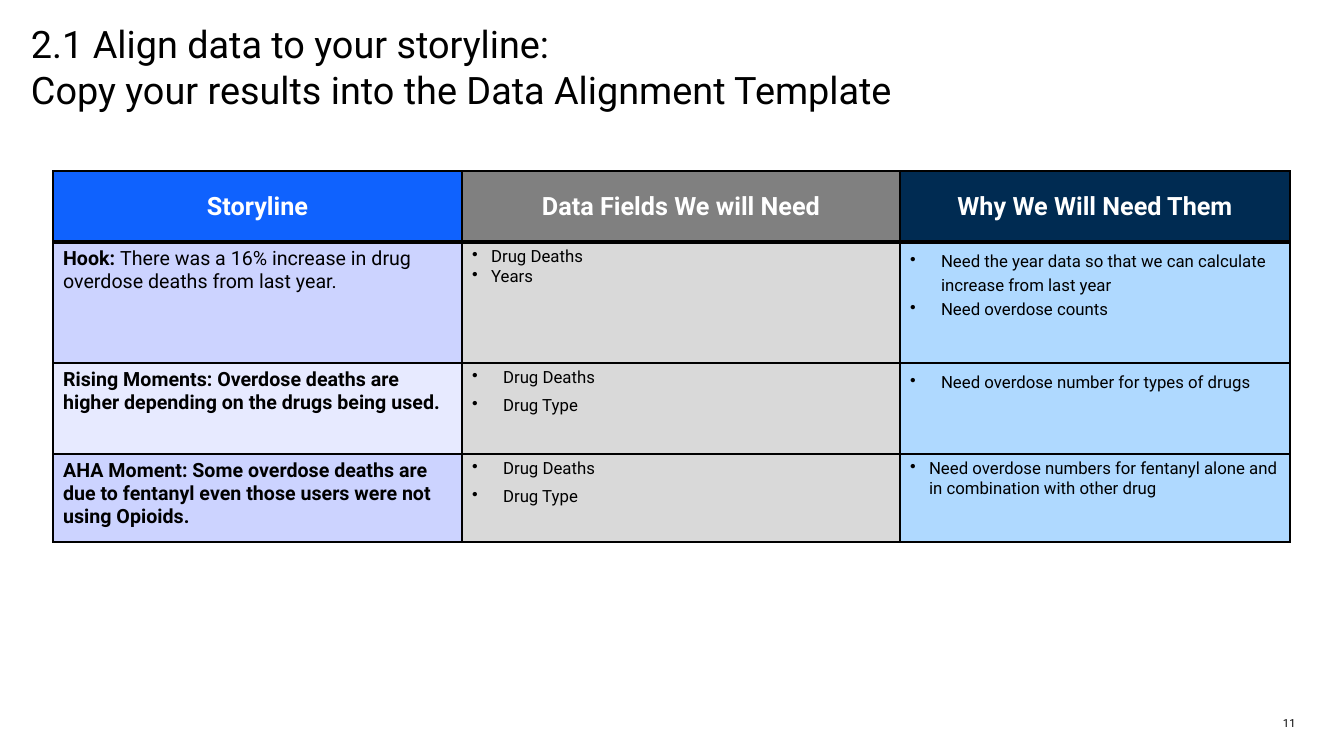
from dataclasses import dataclass

from lxml.etree import SubElement
from pptx import Presentation
from pptx.dml.color import RGBColor
from pptx.enum.text import MSO_ANCHOR, PP_ALIGN
from pptx.oxml.ns import qn
from pptx.util import Emu, Pt

PX = 914400 / 100.8


def px(length):
    return Emu(round(length * PX))


@dataclass(frozen=True)
class Theme:
    font: str = "Roboto"
    ink: str = "000000"
    paper: str = "FFFFFF"
    headers: tuple = ("0F62FE", "808080", "002B52")
    story: str = "CCD3FF"
    story_light: str = "E7EAFF"
    fields: str = "D9D9D9"
    reasons: str = "AFD9FF"
    title_size: int = 27
    header_size: int = 18
    story_size: int = 14
    bullet_size: int = 12
    page_size: int = 8
    rule: int = 1
    header_rule: int = 3


@dataclass(frozen=True)
class Bullets:
    items: tuple
    indent: int = 31
    line_spacing: float = 1.0
    space_after: int = 0


class SlideBuilder:
    def __init__(self, slide, theme):
        self.slide = slide
        self.theme = theme

    def style(self, paragraph, size, color=None, bold=None):
        font = paragraph.font
        font.name = self.theme.font
        font.size = Pt(size)
        font.bold = bold
        font.color.rgb = RGBColor.from_string(color or self.theme.ink)

    def text(self, words, left, top, width, height, size, wrap=True, anchor=MSO_ANCHOR.TOP):
        frame = self.slide.shapes.add_textbox(px(left), px(top), px(width), px(height)).text_frame
        frame.margin_left = frame.margin_right = frame.margin_top = frame.margin_bottom = 0
        frame.word_wrap = wrap
        frame.vertical_anchor = anchor
        frame.text = words
        self.style(frame.paragraphs[0], size)

    def table(self, left, top, widths, heights):
        grid = self.slide.shapes.add_table(
            len(heights), len(widths), px(left), px(top), px(sum(widths)), px(sum(heights))
        ).table
        grid.horz_banding = False
        for column, width in zip(grid.columns, widths):
            column.width = px(width)
        for row, height in zip(grid.rows, heights):
            row.height = px(height)
        return grid

    def cell(self, cell, fill, top_rule, bottom_rule):
        properties = cell._tc.get_or_add_tcPr()
        rule = self.theme.rule
        for side, weight in (("L", rule), ("R", rule), ("T", top_rule), ("B", bottom_rule)):
            line = SubElement(properties, qn(f"a:ln{side}"), w=str(Pt(weight)))
            SubElement(SubElement(line, qn("a:solidFill")), qn("a:srgbClr"), val=self.theme.ink)
        cell.fill.solid()
        cell.fill.fore_color.rgb = RGBColor.from_string(fill)

    def header(self, cell, words, fill):
        self.cell(cell, fill, self.theme.rule, self.theme.header_rule)
        cell.vertical_anchor = MSO_ANCHOR.MIDDLE
        cell.text = words
        heading = cell.text_frame.paragraphs[0]
        heading.alignment = PP_ALIGN.CENTER
        self.style(heading, self.theme.header_size, self.theme.paper, True)

    def story(self, cell, lead, rest):
        paragraph = cell.text_frame.paragraphs[0]
        paragraph.add_run().text = lead
        if rest:
            paragraph.add_run().text = rest
            for run, bold in zip(paragraph.runs, (True, False)):
                run.font.bold = bold
        self.style(paragraph, self.theme.story_size, bold=None if rest else True)

    def bullets(self, cell, bullets):
        cell.text = "\n".join(bullets.items)
        for paragraph in cell.text_frame.paragraphs:
            properties = paragraph._p.get_or_add_pPr()
            properties.set("marL", str(px(bullets.indent)))
            properties.set("indent", str(-px(bullets.indent)))
            SubElement(properties, qn("a:buChar"), char="•")
            paragraph.line_spacing = bullets.line_spacing
            paragraph.space_after = Pt(bullets.space_after)
            self.style(paragraph, self.theme.bullet_size, bold=False)


HEADERS = ("Storyline", "Data Fields We will Need", "Why We Will Need Them")
DRUG_FIELDS = Bullets(("Drug Deaths", "Drug Type"), space_after=6)
MOMENTS = (
    (
        ("Hook: ", "There was a 16% increase in drug overdose deaths from last year."),
        Bullets(("Drug Deaths", "Years"), indent=19),
        Bullets(
            (
                "Need the year data so that we can calculate increase from last year",
                "Need overdose counts",
            ),
            line_spacing=1.23,
        ),
    ),
    (
        ("Rising Moments: Overdose deaths are higher depending on the drugs being used.", ""),
        DRUG_FIELDS,
        Bullets(("Need overdose number for types of drugs",), line_spacing=1.23, space_after=6),
    ),
    (
        (
            "AHA Moment: Some overdose deaths are due to fentanyl even those users "
            "were not using Opioids.",
            "",
        ),
        DRUG_FIELDS,
        Bullets(
            ("Need overdose numbers for fentanyl alone and in combination with other drug",),
            indent=19,
        ),
    ),
)


def main():
    deck = Presentation()
    deck.slide_width, deck.slide_height = px(1344), px(756)
    theme = Theme()
    builder = SlideBuilder(deck.slides.add_slide(deck.slide_layouts[6]), theme)

    # Title
    builder.text(
        "2.1 Align data to your storyline:\vCopy your results into the Data Alignment Template",
        31, 21, 1290, 84, theme.title_size,
    )

    # Alignment table: header row
    alignment = builder.table(53, 171, (409, 438, 390), (71, 121, 91, 88))
    for column, (words, fill) in enumerate(zip(HEADERS, theme.headers)):
        builder.header(alignment.cell(0, column), words, fill)

    # Alignment table: one row per story moment
    for row, (story, fields, reasons) in enumerate(MOMENTS, start=1):
        story_fill = theme.story if row % 2 else theme.story_light
        top_rule = theme.header_rule if row == 1 else theme.rule
        for column, fill in enumerate((story_fill, theme.fields, theme.reasons)):
            builder.cell(alignment.cell(row, column), fill, top_rule, theme.rule)
        builder.story(alignment.cell(row, 0), *story)
        builder.bullets(alignment.cell(row, 1), fields)
        builder.bullets(alignment.cell(row, 2), reasons)

    # Page number
    builder.text("11", 1283, 717, 13, 13, theme.page_size, wrap=False, anchor=MSO_ANCHOR.MIDDLE)

    deck.save("out.pptx")


if __name__ == "__main__":
    main()
